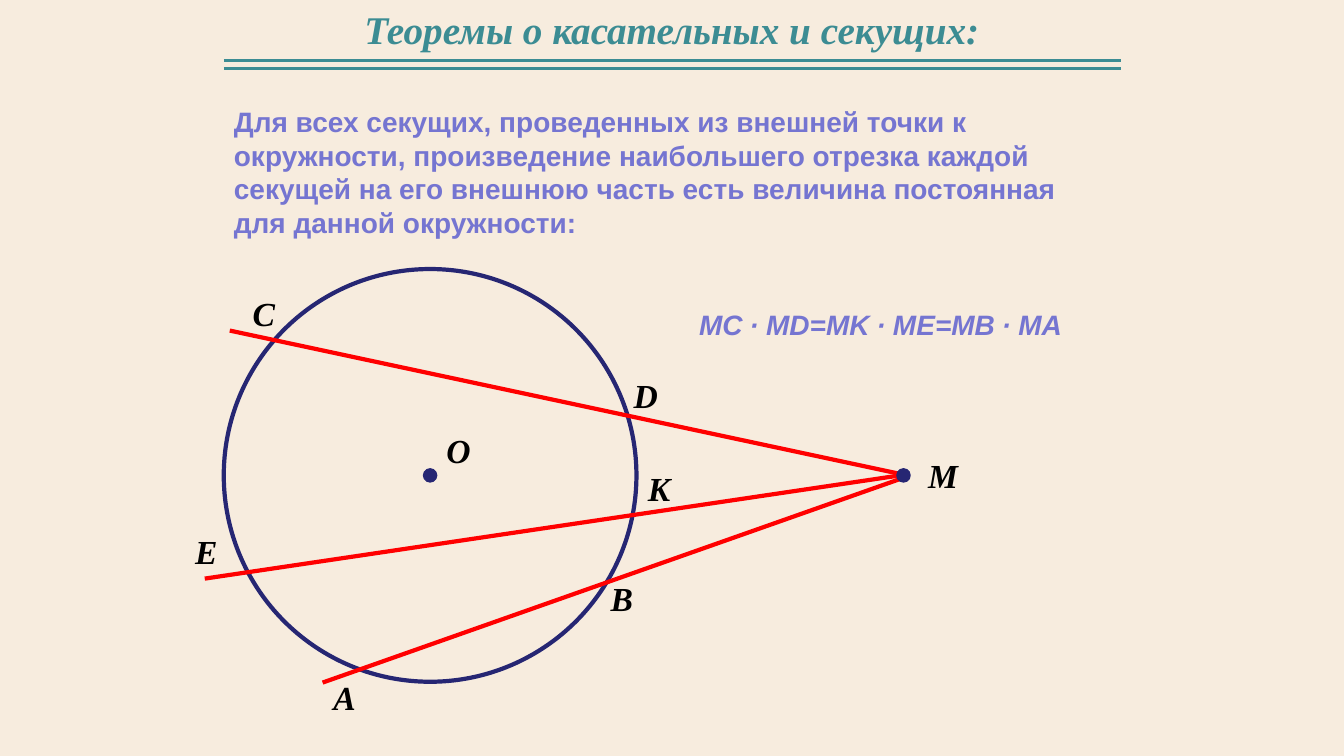
from lxml import etree
from pptx import Presentation
from pptx.dml.color import RGBColor
from pptx.enum.shapes import MSO_CONNECTOR, MSO_SHAPE
from pptx.enum.text import MSO_ANCHOR, MSO_AUTO_SIZE, PP_ALIGN
from pptx.oxml.ns import qn
from pptx.util import Cm, Pt

STRAIGHT = MSO_CONNECTOR.STRAIGHT
OVAL = MSO_SHAPE.OVAL
TOP, MIDDLE = MSO_ANCHOR.TOP, MSO_ANCHOR.MIDDLE
LEFT, CENTER = PP_ALIGN.LEFT, PP_ALIGN.CENTER
NO_AUTOFIT = MSO_AUTO_SIZE.NONE

CREAM = RGBColor(0xF7, 0xEC, 0xDE)
TEAL = RGBColor(0x3C, 0x8C, 0x93)
NAVY = RGBColor(0x26, 0x26, 0x73)
LILAC = RGBColor(0x75, 0x75, 0xD1)
RED = RGBColor(0xFF, 0, 0)
BLACK = RGBColor(0, 0, 0)

SERIF, SANS = "Times New Roman", "Arial"

TITLE = "Теоремы о касательных и секущих:"
THEOREM = (
    "Для всех секущих, проведенных из внешней точки к окружности, "
    "произведение наибольшего отрезка каждой секущей на его внешнюю часть "
    "есть величина постоянная для данной окружности:"
)
FORMULA = "МС ∙ MD=MK ∙ ME=MB ∙ MA"

# Lengths below are in centimetres.
RULE_LEFT, RULE_RIGHT = 5.64, 28.24
RULE_HEIGHTS = (1.52, 1.73)
CENTRE_O, POINT_M = (10.84, 11.98), (22.77, 11.98)
RADIUS, DOT_RADIUS = 5.2, 0.17
SECANTS = (
    ((22.91, 11.99), (8.13, 17.2)),
    ((22.91, 11.99), (5.79, 8.33)),
    ((22.61, 11.99), (5.16, 14.58)),
)
POINT_LABELS = {
    "А": (8.15, 16.92),
    "B": (15.14, 14.45),
    "O": (11, 10.72),
    "M": (23.14, 11.35),
    "K": (16.08, 11.66),
    "E": (4.67, 13.26),
    "D": (15.72, 9.32),
    "C": (6.12, 7.26),
}


def place(shape, left, top, width, height):
    shape.left, shape.top = Cm(left), Cm(top)
    shape.width, shape.height = Cm(width), Cm(height)


def write(shape, text, *, font, size, color, italic=False, align=LEFT, anchor=TOP):
    frame = shape.text_frame
    frame.word_wrap = True
    frame.auto_size = NO_AUTOFIT
    frame.vertical_anchor = anchor
    paragraph = frame.paragraphs[0]
    paragraph.alignment = align
    paragraph.space_before = Pt(0)
    run = paragraph.add_run()
    run.text = text
    run.font.name = font
    run.font.size = Pt(size)
    run.font.bold = True
    run.font.italic = italic
    run.font.color.rgb = color


def remove_bullet(paragraph):
    properties = paragraph._p.get_or_add_pPr()
    properties.set("marL", "0")
    properties.set("indent", "0")
    etree.SubElement(properties, qn("a:buNone"))


def add_label(slide, text, left, top, width, height, **text_format):
    label = slide.shapes.add_textbox(Cm(left), Cm(top), Cm(width), Cm(height))
    write(label, text, **text_format)


def add_line(slide, start, end, color, weight):
    line = slide.shapes.add_connector(
        STRAIGHT, Cm(start[0]), Cm(start[1]), Cm(end[0]), Cm(end[1])
    )
    line.line.color.rgb = color
    line.line.width = Pt(weight)
    etree.SubElement(line._element.spPr, qn("a:effectLst"))


def add_circle(slide, centre, radius, weight, filled=False):
    x, y = centre
    circle = slide.shapes.add_shape(
        OVAL, Cm(x - radius), Cm(y - radius), Cm(2 * radius), Cm(2 * radius)
    )
    circle.shadow.inherit = False
    circle.line.color.rgb = NAVY
    circle.line.width = Pt(weight)
    if filled:
        circle.fill.solid()
        circle.fill.fore_color.rgb = NAVY
    else:
        circle.fill.background()


def add_heading(slide):
    title = slide.shapes.title
    place(title, 4.23, 0, 25.4, 1.45)
    write(title, TITLE, font=SERIF, size=28, color=TEAL, italic=True,
          align=CENTER, anchor=MIDDLE)
    for y in RULE_HEIGHTS:
        add_line(slide, (RULE_LEFT, y), (RULE_RIGHT, y), TEAL, 2.25)


def add_theorem(slide):
    theorem = slide.placeholders[1]
    place(theorem, RULE_LEFT, 2.51, RULE_RIGHT - RULE_LEFT, 3.68)
    write(theorem, THEOREM, font=SANS, size=20, color=LILAC)
    remove_bullet(theorem.text_frame.paragraphs[0])
    add_label(slide, FORMULA, 17.37, 7.62, 10.87, 1.12,
              font=SANS, size=20, color=LILAC, italic=True)


def add_diagram(slide):
    add_circle(slide, CENTRE_O, RADIUS, 3)
    for start, end in SECANTS:
        add_line(slide, start, end, RED, 3)
    for point in (CENTRE_O, POINT_M):
        add_circle(slide, point, DOT_RADIUS, 0.75, filled=True)
    for letter, (left, top) in POINT_LABELS.items():
        add_label(slide, letter, left, top, 1.4, 1.27,
                  font=SERIF, size=24, color=BLACK, italic=True)


def main():
    deck = Presentation()
    deck.slide_width, deck.slide_height = Cm(33.87), Cm(19.05)
    slide = deck.slides.add_slide(deck.slide_layouts[1])
    slide.background.fill.solid()
    slide.background.fill.fore_color.rgb = CREAM
    add_heading(slide)
    add_theorem(slide)
    add_diagram(slide)
    deck.save("out.pptx")


if __name__ == "__main__":
    main()
